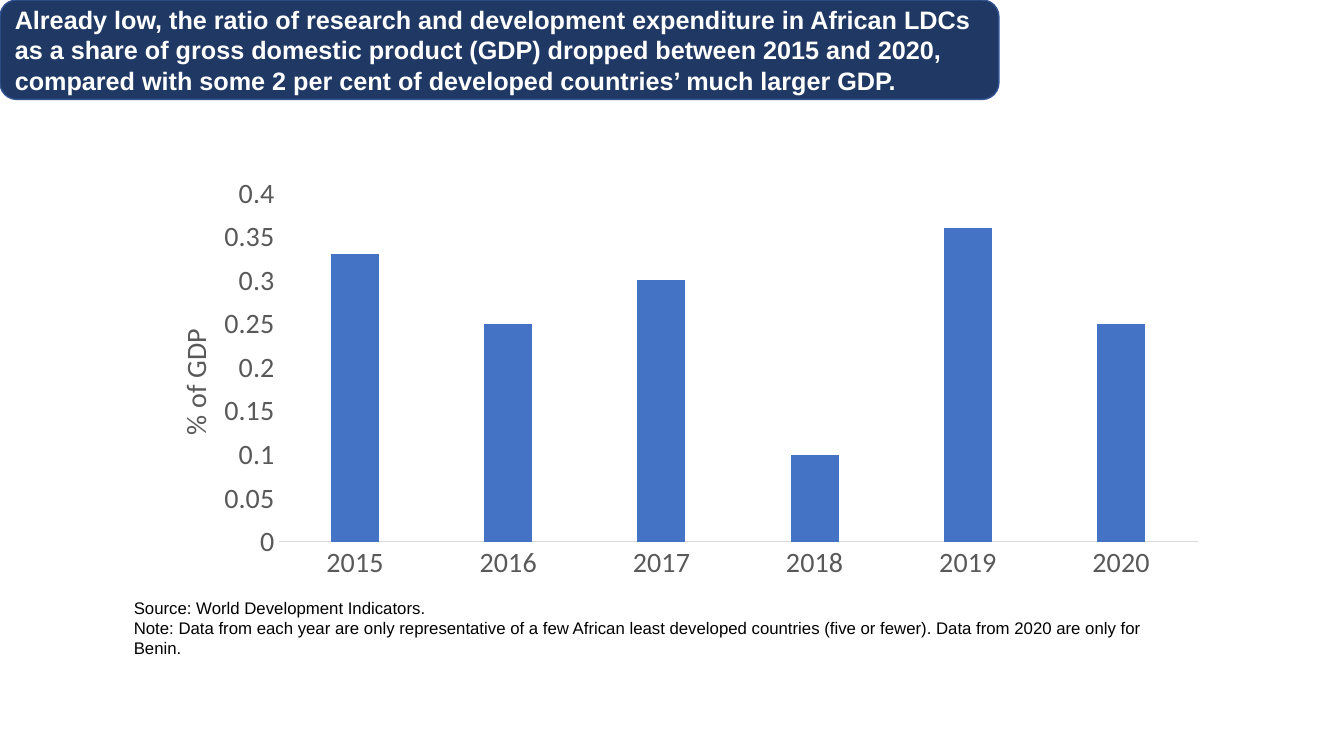
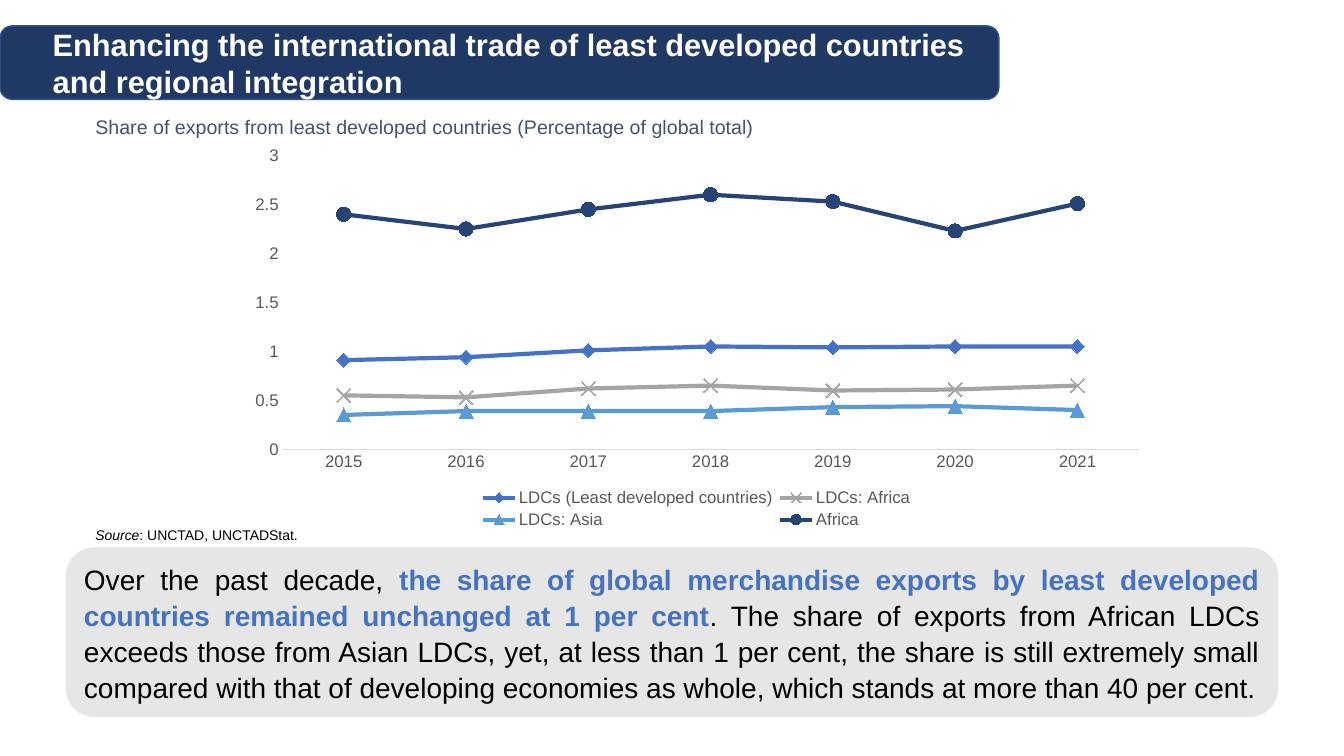
from dataclasses import dataclass, field
from typing import Any, NamedTuple

from pptx import Presentation
from pptx.chart.data import CategoryChartData
from pptx.dml.color import RGBColor
from pptx.enum.chart import XL_CHART_TYPE, XL_LEGEND_POSITION, XL_MARKER_STYLE, XL_TICK_MARK
from pptx.enum.shapes import MSO_SHAPE
from pptx.enum.text import MSO_ANCHOR, PP_ALIGN
from pptx.oxml import parse_xml
from pptx.oxml.ns import nsdecls
from pptx.util import Pt

COLUMN = XL_CHART_TYPE.COLUMN_CLUSTERED
LINE = XL_CHART_TYPE.LINE_MARKERS
BOTTOM = XL_LEGEND_POSITION.BOTTOM
NO_TICK = XL_TICK_MARK.NONE
DIAMOND, CROSS = XL_MARKER_STYLE.DIAMOND, XL_MARKER_STYLE.X
DELTA, DOT = XL_MARKER_STYLE.TRIANGLE, XL_MARKER_STYLE.CIRCLE
ROUND = MSO_SHAPE.ROUNDED_RECTANGLE
TOP, MIDDLE = MSO_ANCHOR.TOP, MSO_ANCHOR.MIDDLE
LEFT, JUSTIFY = PP_ALIGN.LEFT, PP_ALIGN.JUSTIFY

COLORS = {
    "navy": "203864", "edge": "325491", "white": "FFFFFF", "black": "000000",
    "blue": "4472C4", "gray": "A5A5A5", "sky": "5B9BD5", "dark": "264478",
    "label": "595959", "rule": "D9D9D9", "slate": "44546A", "panel": "E7E6E6",
}
PLAIN = {"alignment": LEFT}
PROSE = {"alignment": JUSTIFY, "line_spacing": 1.07, "space_after": Pt(8)}


class Box(NamedTuple):
    left: float
    top: float
    width: float
    height: float

    def points(self) -> list[Pt]:
        return [Pt(side) for side in self]


class Run(NamedTuple):
    text: str
    color: str = "black"
    bold: bool = False
    slant: bool = False


class Series(NamedTuple):
    name: str
    values: tuple[float, ...]
    color: str
    mark: Any = None


@dataclass
class Text:
    lines: list[list[Run]]
    size: float
    format: dict[str, Any] = field(default_factory=lambda: PLAIN)
    margin: float = 0
    indent: float = 0
    anchor: Any = TOP


@dataclass
class Graph:
    kind: Any
    box: Box
    plot: Box
    years: range
    series: list[Series]
    top: float
    step: float
    font: str
    size: float
    title: str = ""
    title_box: Box | None = None
    legend_box: Box | None = None


def tint(name: str) -> RGBColor:
    return RGBColor.from_string(COLORS[name])


def style(target: Any, values: dict[str, Any]) -> None:
    for key, value in values.items():
        setattr(target, key, value)


def paint(fill: Any, color: str) -> None:
    fill.solid()
    fill.fore_color.rgb = tint(color)


def set_font(font: Any, name: str, size: float, color: str,
             bold: bool = False, slant: bool = False) -> None:
    style(font, {"name": name, "size": Pt(size), "bold": bold, "italic": slant})
    font.color.rgb = tint(color)


def write(shape: Any, text: Text) -> None:
    frame = shape.text_frame
    style(frame, {"word_wrap": True, "vertical_anchor": text.anchor})
    for index, line in enumerate(text.lines):
        para = frame.add_paragraph() if index else frame.paragraphs[0]
        props = para._p.get_or_add_pPr()
        props.set("marL", str(Pt(text.margin)))
        props.set("indent", str(Pt(text.indent)))
        style(para, text.format)
        for part in line:
            run = para.add_run()
            run.text = part.text
            set_font(run.font, "Arial", text.size, part.color, part.bold, part.slant)


def add_note(slide: Any, box: Box, text: Text) -> None:
    write(slide.shapes.add_textbox(*box.points()), text)


def add_panel(slide: Any, box: Box, fill: str, edge: str, text: Text) -> None:
    shape = slide.shapes.add_shape(ROUND, *box.points())
    shape.shadow.inherit = False
    paint(shape.fill, fill)
    if edge:
        paint(shape.line.fill, edge)
        shape.line.width = Pt(1)
    else:
        shape.line.fill.background()
    write(shape, text)


def add_band(slide: Any, top: float, title: str, size: float, margin: float = 0) -> None:
    text = Text([[Run(title, "white", True)]], size, margin=margin, anchor=MIDDLE)
    add_panel(slide, Box(0, top, 713.5, 71 - top), "navy", "edge", text)


def place(node: Any, index: int, box: Box, inner: bool = False) -> None:
    for old in node.xpath("c:layout"):
        node.remove(old)
    target = '<c:layoutTarget val="inner"/>' if inner else ""
    modes = '<c:xMode val="edge"/><c:yMode val="edge"/>'
    sides = "".join(f'<c:{key} val="{value}"/>' for key, value in zip("xywh", box) if value)
    node.insert(index, parse_xml(
        f'<c:layout {nsdecls("c")}><c:manualLayout>{target}{modes}{sides}'
        "</c:manualLayout></c:layout>"))


def style_axis(axis: Any, graph: Graph) -> None:
    style(axis, {"major_tick_mark": NO_TICK, "minor_tick_mark": NO_TICK,
                 "has_major_gridlines": False})
    set_font(axis.tick_labels.font, graph.font, graph.size, "label")


def style_series(item: Any, series: Series) -> None:
    if not series.mark:
        paint(item.format.fill, series.color)
        return
    item.smooth = False
    paint(item.format.line.fill, series.color)
    item.format.line.width = Pt(3)
    style(item.marker, {"style": series.mark, "size": 10})
    paint(item.marker.format.fill, series.color)
    paint(item.marker.format.line.fill, series.color)


def add_graph(slide: Any, graph: Graph) -> None:
    data = CategoryChartData()
    data.categories = [str(year) for year in graph.years]
    for series in graph.series:
        data.add_series(series.name, series.values)
    chart = slide.shapes.add_chart(graph.kind, *graph.box.points(), data).chart
    style(chart, {"has_title": False, "has_legend": bool(graph.legend_box)})
    set_font(chart.font, graph.font, graph.size, "label")
    place(chart._chartSpace.xpath("c:chart/c:plotArea")[0], 0, graph.plot, True)

    base, scale = chart.category_axis, chart.value_axis
    for axis in (base, scale):
        style_axis(axis, graph)
    paint(base.format.line.fill, "rule")
    base.format.line.width = Pt(0.75)
    scale.format.line.fill.background()
    style(scale, {"minimum_scale": 0, "maximum_scale": graph.top, "major_unit": graph.step})
    style(scale.tick_labels, {"number_format": "General", "number_format_is_linked": False})

    if graph.title:
        title = scale.axis_title
        title.text_frame.text = graph.title
        run = title.text_frame.paragraphs[0].runs[0]
        set_font(run.font, graph.font, graph.size, "label")
        place(title._element, 1, graph.title_box)
    if graph.legend_box:
        style(chart.legend, {"position": BOTTOM, "include_in_layout": False})
        set_font(chart.legend.font, graph.font, graph.size, "label")
        place(chart.legend._element, 1, graph.legend_box)

    plot = chart.plots[0]
    plot.vary_by_categories = False
    if graph.kind == COLUMN:
        style(plot, {"gap_width": 219, "overlap": -27})
    for item, series in zip(plot.series, graph.series):
        style_series(item, series)


SPENDING = Graph(
    COLUMN, Box(98.5, 120, 772.5, 300), Box(0.13, 0.06, 0.85, 0.83), range(2015, 2021),
    [Series("Series 1", (0.33, 0.25, 0.3, 0.1, 0.36, 0.25), "blue")],
    0.4, 0.05, "Calibri", 20, "% of GDP", Box(0.03, 0.37, 0, 0))

EXPORTS = Graph(
    LINE, Box(169, 97, 657.5, 283.5), Box(0.05, 0.05, 0.93, 0.74), range(2015, 2022),
    [
        Series("LDCs (Least developed countries)",
               (0.91, 0.94, 1.01, 1.05, 1.04, 1.05, 1.05), "blue", DIAMOND),
        Series("LDCs: Africa", (0.55, 0.53, 0.62, 0.65, 0.6, 0.61, 0.65), "gray", CROSS),
        Series("LDCs: Asia", (0.35, 0.39, 0.39, 0.39, 0.43, 0.44, 0.4), "sky", DELTA),
        Series("Africa", (2.4, 2.25, 2.45, 2.6, 2.53, 2.23, 2.51), "dark", DOT),
    ],
    3, 0.5, "Arial", 12, legend_box=Box(0.26, 0.88, 0.48, 0.12))


def build_spending(slide: Any) -> None:
    add_band(slide, 0, "Already low, the ratio of research and development expenditure in "
             "African LDCs as a share of gross domestic product (GDP) dropped between 2015 "
             "and 2020, compared with some 2 per cent of developed countries’ much larger "
             "GDP.", 18)
    add_graph(slide, SPENDING)
    add_note(slide, Box(88.5, 423.5, 755, 51), Text([
        [Run("Source: World Development Indicators.")],
        [Run("Note: Data from each year are only representative of a few African least "
             "developed countries (five or fewer). Data from 2020 are only for Benin.")],
    ], 12))


def build_exports(slide: Any) -> None:
    add_band(slide, 18.5, "Enhancing the international trade of least developed countries "
             "and regional integration", 22, 28)
    add_graph(slide, EXPORTS)
    add_note(slide, Box(61, 78.5, 522.5, 24.5), Text([
        [Run("Share of exports from least developed countries (Percentage of global total)",
             "slate")]], 14))
    add_note(slide, Box(25, 371.5, 480, 19.5), Text([
        [Run("Source", slant=True), Run(": UNCTAD, UNCTADStat.")]], 10, PROSE, indent=36))
    add_panel(slide, Box(47, 391, 866, 121), "panel", "", Text([[
        Run("Over the past decade, "),
        Run("the share of global merchandise exports by least developed countries remained "
            "unchanged at 1 per cent", "blue", True),
        Run(". The share of exports from African LDCs exceeds those from Asian LDCs, yet, at "
            "less than 1 per cent, the share is still extremely small compared with that of "
            "developing economies as whole, which stands at more than 40 per cent."),
    ]], 20, PROSE))


def main() -> None:
    deck = Presentation()
    style(deck, {"slide_width": Pt(960), "slide_height": Pt(540)})
    for build in (build_spending, build_exports):
        build(deck.slides.add_slide(deck.slide_layouts[6]))
    deck.save("out.pptx")


if __name__ == "__main__":
    main()
